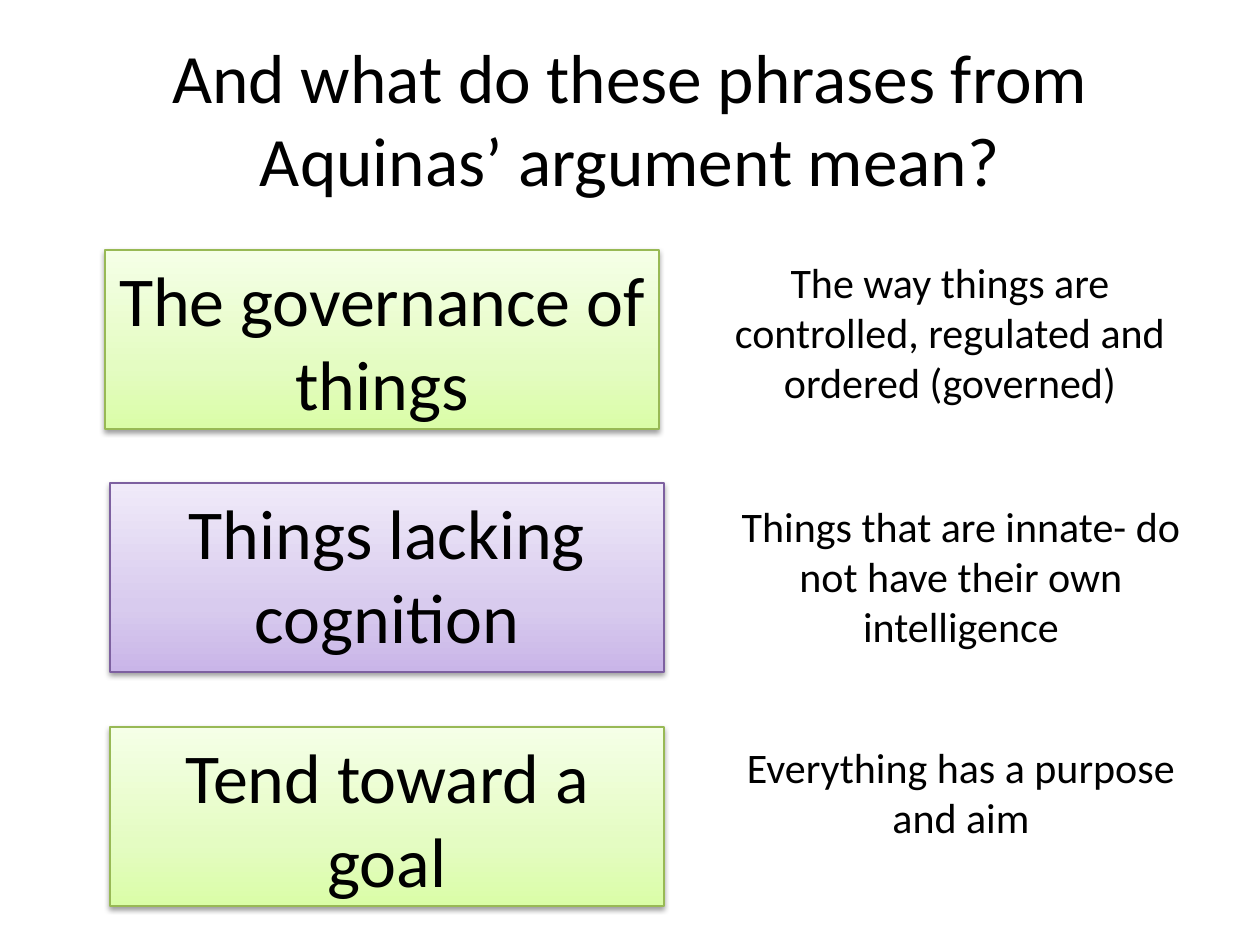
from copy import deepcopy

from lxml import etree
from pptx import Presentation
from pptx.dml.color import RGBColor
from pptx.enum.shapes import MSO_SHAPE
from pptx.enum.text import MSO_ANCHOR, MSO_AUTO_SIZE, PP_ALIGN
from pptx.oxml.ns import qn
from pptx.util import Emu, Pt

RECTANGLE = MSO_SHAPE.RECTANGLE
TOP = MSO_ANCHOR.TOP
MIDDLE = MSO_ANCHOR.MIDDLE
NO_FIT = MSO_AUTO_SIZE.NONE
GROW = MSO_AUTO_SIZE.SHAPE_TO_FIT_TEXT
CENTER = PP_ALIGN.CENTER

EMU_PER_PX = 914400 / 126
TITLE_ONLY = 5
FONT = "Calibri"
BLACK = RGBColor(0x00, 0x00, 0x00)
GREEN_LINE = RGBColor(0x98, 0xB9, 0x55)
PURPLE_LINE = RGBColor(0x7D, 0x60, 0xA0)
GREEN_STOPS = (
    (0, RGBColor(0xDA, 0xFD, 0xA7)),
    (0.35, RGBColor(0xE4, 0xFC, 0xC2)),
    (1, RGBColor(0xF5, 0xFF, 0xE7)),
)
PURPLE_STOPS = (
    (0, RGBColor(0xC9, 0xB5, 0xE8)),
    (0.35, RGBColor(0xD8, 0xCB, 0xEE)),
    (1, RGBColor(0xF0, 0xEA, 0xF9)),
)
GREEN = (GREEN_STOPS, GREEN_LINE)
PURPLE = (PURPLE_STOPS, PURPLE_LINE)

PHRASES = (
    ("The governance of things", (105, 250, 554, 179), GREEN),
    ("Things lacking cognition", (110, 483, 554, 189), PURPLE),
    ("Tend toward a goal", (110, 727, 554, 179), GREEN),
)
MEANINGS = (
    ("The way things are controlled, regulated and ordered (governed)", (703, 250, 494, 165)),
    ("Things that are innate- do not have their own intelligence", (714, 494, 494, 165)),
    ("Everything has a purpose and aim", (714, 735, 494, 115)),
)


def px(length):
    return Emu(round(length * EMU_PER_PX))


class SlideBuilder:
    def __init__(self, presentation):
        self.slide = presentation.slides.add_slide(presentation.slide_layouts[TITLE_ONLY])

    def set_text(self, shape, text, size, anchor, fit):
        frame = shape.text_frame
        frame.text = text
        frame.word_wrap = True
        frame.auto_size = fit
        frame.vertical_anchor = anchor
        paragraph = frame.paragraphs[0]
        paragraph.alignment = CENTER
        paragraph.font.name = FONT
        paragraph.font.size = Pt(size)
        paragraph.font.color.rgb = BLACK
        return paragraph

    def title(self, text, box):
        shape = self.slide.shapes.title
        shape.left, shape.top, shape.width, shape.height = map(px, box)
        self.set_text(shape, text, 39.6, MIDDLE, NO_FIT)

    def phrase(self, text, box, colors):
        shape = self.slide.shapes.add_shape(RECTANGLE, *map(px, box))
        stops, line_color = colors
        self.gradient(shape, stops)
        shape.line.color.rgb = line_color
        shape.line.width = Pt(0.75)
        self.shadow(shape)
        paragraph = self.set_text(shape, text, 40, TOP, NO_FIT)
        paragraph.space_before = Pt(2)

    def meaning(self, text, box):
        shape = self.slide.shapes.add_textbox(*map(px, box))
        self.set_text(shape, text, 24, TOP, GROW)

    def gradient(self, shape, stops):
        shape.fill.gradient()
        shape.fill.gradient_angle = 90
        stop_list = next(shape.element.iter(qn("a:gsLst")))
        stop_list.insert(1, deepcopy(stop_list[0]))
        for stop, (position, color) in zip(shape.fill.gradient_stops, stops):
            stop.position = position
            stop.color.rgb = color

    def shadow(self, shape):
        shape.shadow.inherit = False
        effects = next(shape.element.iter(qn("a:effectLst")))
        shadow = etree.SubElement(
            effects,
            qn("a:outerShdw"),
            blurRad=str(int(Pt(3.1))),
            dist=str(int(Pt(1.6))),
            dir="5400000",
            rotWithShape="0",
        )
        color = etree.SubElement(shadow, qn("a:srgbClr"), val=str(BLACK))
        etree.SubElement(color, qn("a:alpha"), val="38000")


def main():
    presentation = Presentation()
    presentation.slide_width = px(1260)
    presentation.slide_height = px(945)
    builder = SlideBuilder(presentation)
    builder.title("And what do these phrases from Aquinas’ argument mean?", (63, 38, 1134, 158))
    for text, box, colors in PHRASES:
        builder.phrase(text, box, colors)
    for text, box in MEANINGS:
        builder.meaning(text, box)
    presentation.save("out.pptx")


if __name__ == "__main__":
    main()
